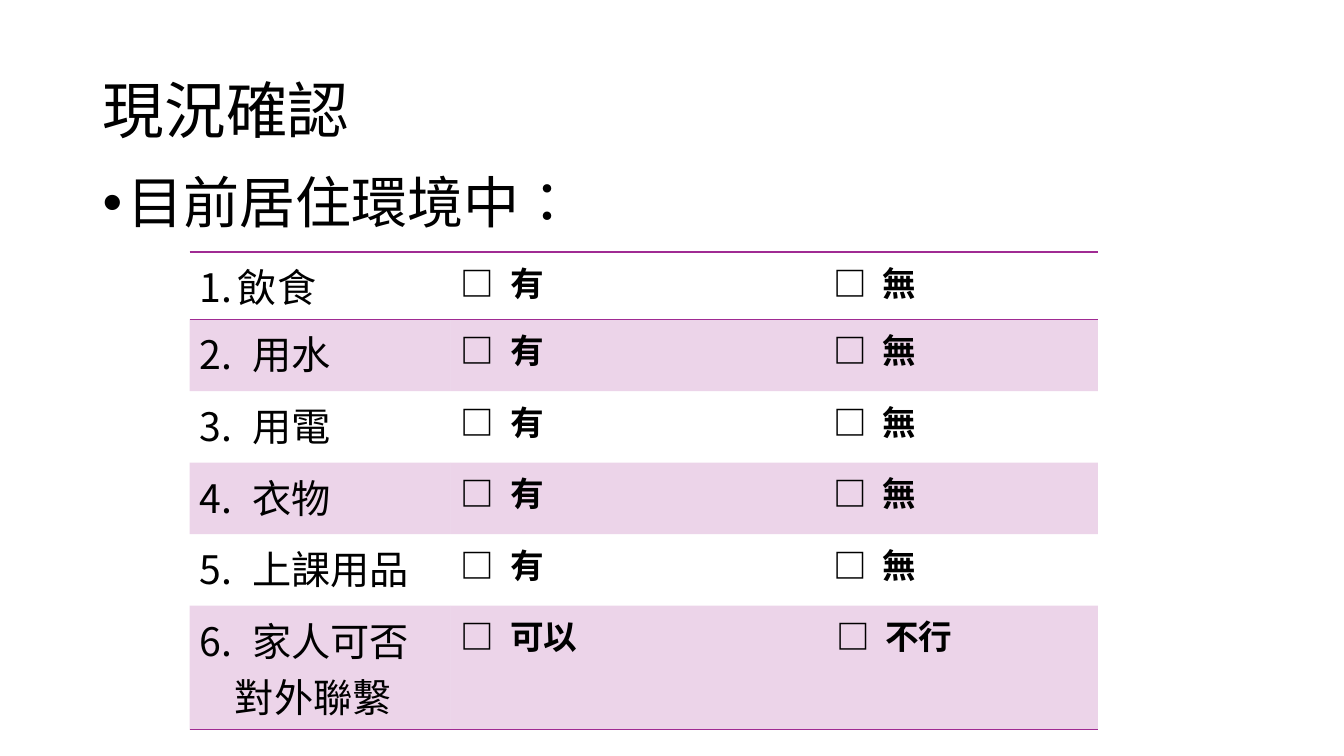
from lxml.etree import SubElement
from pptx import Presentation
from pptx.dml.color import RGBColor
from pptx.enum.text import MSO_ANCHOR, PP_ALIGN
from pptx.oxml import parse_xml
from pptx.oxml.ns import qn
from pptx.util import Inches, Pt

FACE, BLACK, PURPLE = "Noto Sans CJK SC", "000000", "A02B93"
PLAIN = "{2D5ABB26-0587-4C30-8999-92F81FD0307C}"  # no style, no grid
NS = "http://schemas.openxmlformats.org/drawingml/2006/main"

TITLE = "現況確認"
LEAD = "目前居住環境中："
YES_NO = ("有", "無")
ROWS = [
    (["飲食"], YES_NO),
    (["2.\t用水"], YES_NO),
    (["3.\t用電"], YES_NO),
    (["4.\t衣物"], YES_NO),
    (["5.\t上課用品"], YES_NO),
    (["6.\t家人可否", "對外聯繫"], ("可以", "不行")),
]
WIDTHS = [2.59, 6.42]
HEIGHTS = [0.67] + [0.71] * 4 + [1.23]
NUM_TAB, WRAP = 0.52, 0.35
BOX_TABS = [0.49, 3.7, 4.18]
END_TABS = [0.49, 3.73, 4.21]


def color(code):
    return RGBColor.from_string(code)


def write(para, text, size, bold=False):
    run = para.add_run()
    run.text = text
    form = {"name": FACE, "size": Pt(size), "bold": bold}
    for key, value in form.items():
        setattr(run.font, key, value)
    run.font.color.rgb = color(BLACK)
    props = run.font._element
    props.set("lang", "zh-TW")
    for tag in ("a:ea", "a:cs"):
        SubElement(props, qn(tag), typeface=FACE)


def indent(para, left, first=0):
    props = para._p.get_or_add_pPr()
    props.set("marL", str(Inches(left)))
    props.set("indent", str(Inches(first)))
    return props


def add_tabs(para, stops):
    tabs = SubElement(para._p.get_or_add_pPr(), qn("a:tabLst"))
    for stop in stops:
        SubElement(tabs, qn("a:tab"), pos=str(Inches(stop)), algn="l")


def rule(cell, sides):
    """Draw thin purple borders on the given sides, in schema order."""
    for place, side in enumerate(sides):
        line = parse_xml(
            f'<a:ln{side} xmlns:a="{NS}" w="12700"><a:solidFill>'
            f'<a:srgbClr val="{PURPLE}"/></a:solidFill></a:ln{side}>')
        cell._tc.get_or_add_tcPr().insert(place, line)


def shade(cell, tint):
    if not tint:
        cell.fill.background()
        return
    cell.fill.solid()
    cell.fill.fore_color.rgb = color(PURPLE)
    clr = cell._tc.tcPr.find(".//" + qn("a:srgbClr"))
    SubElement(clr, qn("a:alpha"), val="20000")


def add_title(slide):
    title = slide.shapes.title
    place = {"left": 0.92, "top": 0.4, "width": 11.5, "height": 1.45}
    for key, value in place.items():
        setattr(title, key, Inches(value))
    title.text_frame.vertical_anchor = MSO_ANCHOR.MIDDLE
    para = title.text_frame.paragraphs[0]
    para.alignment, para.line_spacing = PP_ALIGN.LEFT, 0.9
    write(para, TITLE, 44)


def add_lead(slide):
    box = slide.shapes.add_textbox(*map(Inches, (0.92, 1.69, 11.5, 4.76)))
    box.text_frame.word_wrap = True
    para = box.text_frame.paragraphs[0]
    para.line_spacing, para.space_before = 0.9, Pt(10)
    props = indent(para, 0.25, -0.25)
    SubElement(props, qn("a:buFont"), typeface="Arial")
    SubElement(props, qn("a:buChar"), char="•")
    write(para, LEAD, 40)


def fill_label(cell, lines, auto):
    frame = cell.text_frame
    for pos, text in enumerate(lines):
        para = frame.add_paragraph() if pos else frame.paragraphs[0]
        if auto:
            props = indent(para, 0.38, -0.38)
            SubElement(props, qn("a:buFont"), typeface=FACE)
            SubElement(props, qn("a:buAutoNum"), type="arabicPeriod")
        elif pos:
            indent(para, WRAP)
        else:
            add_tabs(para, [NUM_TAB])
        write(para, text, 28)


def add_form(slide):
    frame = slide.shapes.add_table(
        len(ROWS), len(WIDTHS), Inches(1.88), Inches(2.5),
        Inches(sum(WIDTHS)), Inches(sum(HEIGHTS)))
    table = frame.table
    table.first_row = table.horz_banding = False
    table._tbl.tblPr.find(qn("a:tableStyleId")).text = PLAIN
    for col, width in zip(table.columns, WIDTHS):
        col.width = Inches(width)
    last = len(ROWS) - 1
    for num, (lines, picks) in enumerate(ROWS):
        table.rows[num].height = Inches(HEIGHTS[num])
        label, choice = table.cell(num, 0), table.cell(num, 1)
        fill_label(label, lines, auto=num == 0)
        para = choice.text_frame.paragraphs[0]
        add_tabs(para, END_TABS if num == last else BOX_TABS)
        write(para, "\t".join(f"□\t{pick}" for pick in picks), 24, True)
        for cell in (label, choice):
            shade(cell, num % 2)
            rule(cell, {0: "TB", last: "B"}.get(num, ""))


def main():
    deck = Presentation()
    deck.slide_width, deck.slide_height = Inches(13.33), Inches(7.5)
    slide = deck.slides.add_slide(deck.slide_layouts[5])
    add_title(slide)
    add_lead(slide)
    add_form(slide)
    deck.save("out.pptx")


if __name__ == "__main__":
    main()
